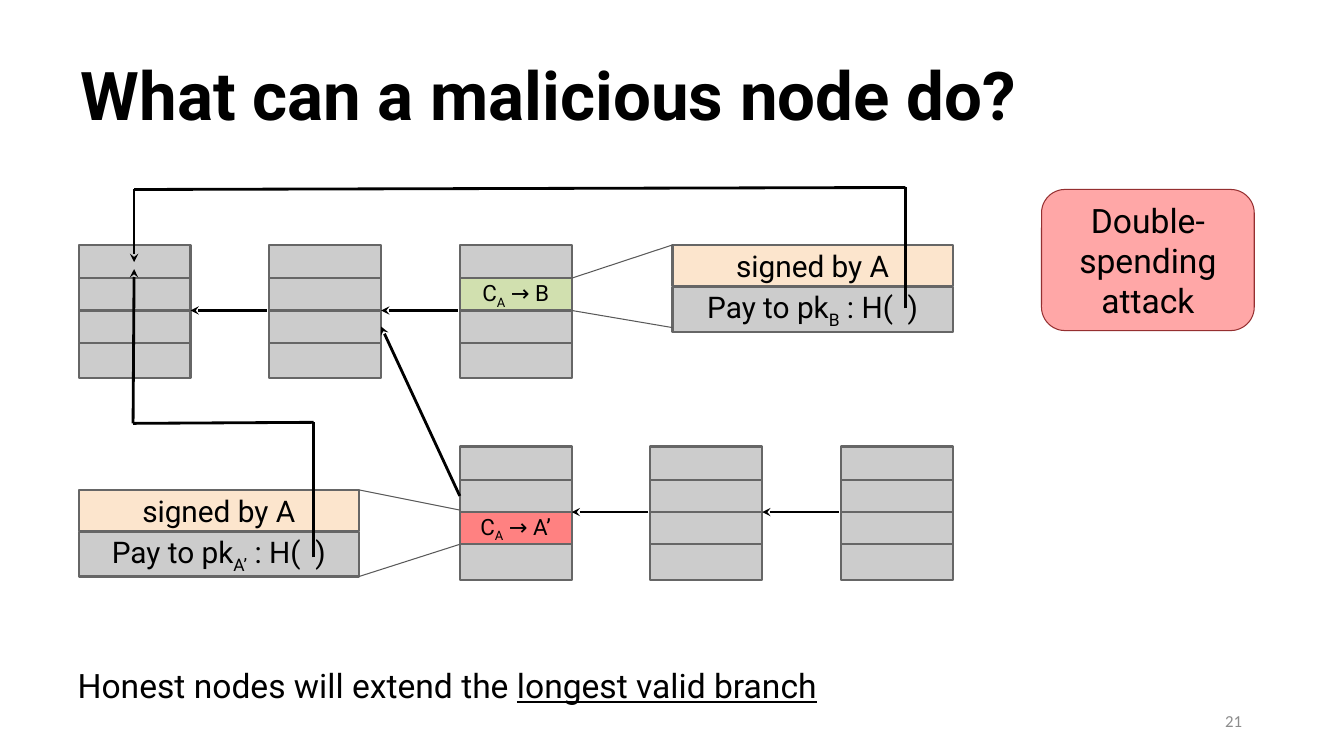
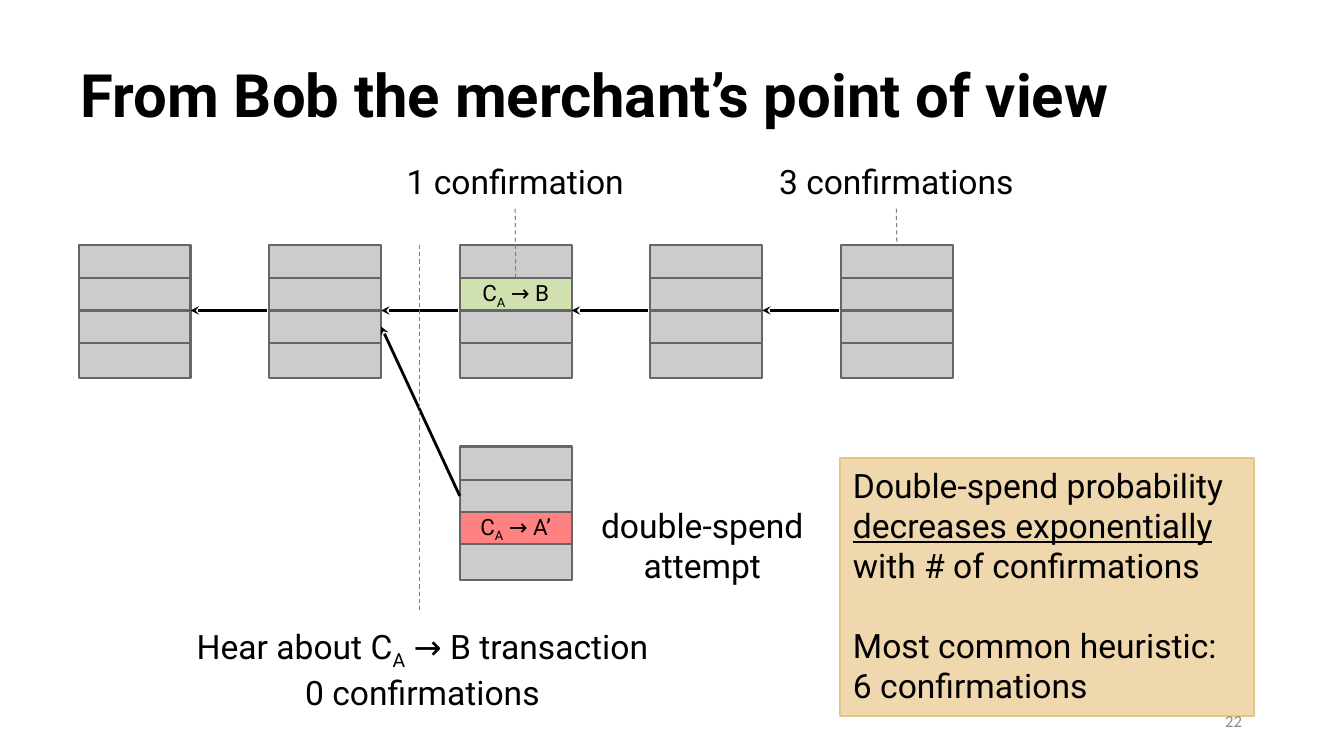
from lxml.etree import SubElement
from pptx import Presentation
from pptx.dml.color import RGBColor as RGB
from pptx.enum.dml import MSO_LINE as DASH
from pptx.enum.shapes import MSO_CONNECTOR as LINK
from pptx.enum.shapes import MSO_SHAPE as SHAPE
from pptx.enum.text import MSO_ANCHOR as ANCHOR
from pptx.enum.text import MSO_AUTO_SIZE as FIT
from pptx.enum.text import PP_ALIGN as ALIGN
from pptx.oxml.ns import qn
from pptx.util import Pt

SCALE = 9144
BLACK = RGB(0x00, 0x00, 0x00)
GREY = RGB(0xCC, 0xCC, 0xCC)
EDGE = RGB(0x66, 0x66, 0x66)
ZOOM = RGB(0x59, 0x59, 0x59)
GUIDE = RGB(0x7F, 0x7F, 0x7F)
PALE = RGB(0x8C, 0x8C, 0x8C)
GREEN = RGB(0xD1, 0xE0, 0xAF)
RED = RGB(0xFF, 0x81, 0x81)
CREAM = RGB(0xFC, 0xE5, 0xCD)
PINK = RGB(0xFF, 0xA7, 0xA7)
WINE = RGB(0x95, 0x2F, 0x30)
SAND = RGB(0xEF, 0xD7, 0xAE)
GOLD = RGB(0xE7, 0xC5, 0x86)

LEFT, PITCH, WIDE = 78, 189, 111
HIGH, LOW = 243, 443
ROWS = [(0, 33), (33, 32), (65, 32), (97, 35)]
JOINT = 65
CARD = 278


def px(*nums):
    return [num * SCALE for num in nums]


def col_x(col):
    return LEFT + col * PITCH


def lower(font):
    font._element.set("baseline", "-25000")


def under(font):
    font.underline = True


def write(shape, text, size=24, align=ALIGN.CENTER, anchor=ANCHOR.TOP,
          mark=lower, face="Roboto", color=BLACK, bold=False, gap=0):
    frame = shape.text_frame
    frame.word_wrap = True
    frame.auto_size = FIT.NONE
    frame.vertical_anchor = anchor
    frame.margin_left, frame.margin_right = px(13, 13)
    frame.margin_top, frame.margin_bottom = px(7, 7)
    frame.text = text
    for num, para in enumerate(frame.paragraphs):
        para.alignment = align
        if num and gap:
            para.space_before = Pt(gap)
        parts = para.text.split("|")
        para.text = parts[0]
        for part in parts[1:]:
            para.add_run().text = part
        for run in para.runs:
            font = run.font
            font.name, font.size, font.bold = face, Pt(size), bold
            font.color.rgb = color
        for run in para.runs[1::2] if len(parts) > 1 else []:
            mark(run.font)


def label(slide, box, text, **style):
    write(slide.shapes.add_textbox(*px(*box)), text, **style)


def panel(shapes, box, fill, edge=EDGE, width=1.5, kind=SHAPE.RECTANGLE):
    shape = shapes.add_shape(kind, *px(*box))
    shape.shadow.inherit = False
    shape.fill.solid()
    shape.fill.fore_color.rgb = fill
    shape.line.color.rgb = edge
    shape.line.width = Pt(width)
    return shape


def stroke(slide, start, end, color=BLACK, width=2, tip=False, dash=False):
    line = slide.shapes.add_connector(LINK.STRAIGHT, *px(*start, *end))
    line.line.color.rgb = color
    line.line.width = Pt(width)
    if dash:
        line.line.dash_style = DASH.DASH
    props = line._element.spPr
    if tip:
        SubElement(props.find(qn("a:ln")), qn("a:tailEnd"), type="stealth")
    SubElement(props, qn("a:effectLst"))
    return line


def guide(slide, start, end):
    return stroke(slide, start, end, GUIDE, 0.75, dash=True)


def block(slide, col, top, spot=None, text="", fill=GREY):
    group = slide.shapes.add_group_shape()
    cells = []
    for row, (drop, tall) in enumerate(ROWS):
        tint = fill if row == spot else GREY
        cell = panel(group.shapes, (col_x(col), top + drop, WIDE, tall), tint)
        if row == spot:
            write(cell, text, 16, anchor=ANCHOR.MIDDLE)
        cells.append(cell)
    return cells


def arrow(slide, col, top):
    y = top + JOINT
    stroke(slide, (col_x(col) - 2, y), (col_x(col - 1) + WIDE, y), tip=True)


def card(slide, x, top, text):
    group = slide.shapes.add_group_shape()
    for drop, tall, fill, words in ((42, 44, GREY, text),
                                    (0, 41, CREAM, "signed by A")):
        cell = panel(group.shapes, (x, top + drop, CARD, tall), fill)
        write(cell, words, 21.3, anchor=ANCHOR.MIDDLE)


def route(slide, *points):
    last = len(points) - 2
    for num, (start, end) in enumerate(zip(points, points[1:])):
        stroke(slide, start, end, tip=num == last)


def chain(slide, top):
    cells = []
    for col in (3, 4):
        cells = block(slide, col, top)
        arrow(slide, col, top)
    return cells


def fork(slide):
    block(slide, 0, HIGH)
    base = block(slide, 1, HIGH)
    good = block(slide, 2, HIGH, 1, "C|A| → B", GREEN)
    bad = block(slide, 2, LOW, 2, "C|A| → A’", RED)
    for col in (1, 2):
        arrow(slide, col, HIGH)
    branch = stroke(slide, (456, 492), (378, 324), tip=True)
    branch.begin_connect(bad[1], 1)
    branch.end_connect(base[2], 3)
    return good


def start(deck, layout, text, size):
    slide = deck.slides.add_slide(layout)
    write(slide.shapes.title, text, size, ALIGN.LEFT, ANCHOR.MIDDLE, bold=True)
    return slide


def number(slide, text):
    label(slide, (942, 695, 303, 40), text, size=12, align=ALIGN.RIGHT,
          anchor=ANCHOR.MIDDLE, face="Calibri", color=PALE)


def attack(deck, layout):
    slide = start(deck, layout, "What can a malicious node do?", 48)
    fork(slide)
    chain(slide, LOW)
    card(slide, 667, HIGH, "Pay to pk|B| : H(  )")
    card(slide, LEFT, 486, "Pay to pk|A’| : H(  )")
    route(slide, (898, 306), (898, 186), (133, 188), (133, 260))
    route(slide, (311, 553), (311, 419), (132, 420), (133, 267))
    for ends in (((567, 276), (667, 243)), ((567, 308), (667, 325)),
                 ((356, 486), (456, 506)), ((356, 572), (456, 540))):
        stroke(slide, *ends, ZOOM, 0.75)
    badge = panel(slide.shapes, (1033, 188, 211, 140), PINK, WINE, 0.75,
                  SHAPE.ROUNDED_RECTANGLE)
    write(badge, "Double-spending attack", anchor=ANCHOR.MIDDLE)
    label(slide, (64, 653, 781, 54),
          "Honest nodes will extend the |longest valid branch",
          align=ALIGN.LEFT, mark=under)
    number(slide, "21")


def merchant(deck, layout):
    slide = start(deck, layout, "From Bob the merchant’s point of view", 42.7)
    good = fork(slide)
    end = chain(slide, HIGH)
    guide(slide, (416, HIGH), (416, 608))
    guide(slide, (511, 207), (511, 276)).end_connect(good[1], 0)
    guide(slide, (889, 207), (889, HIGH)).end_connect(end[0], 0)
    label(slide, (174, 614, 490, 94),
          "Hear about C|A| → B transaction\n0 confirmations")
    label(slide, (387, 153, 248, 54), "1 confirmation")
    label(slide, (758, 153, 262, 54), "3 confirmations")
    label(slide, (581, 494, 231, 94), "double-spend\vattempt")
    note = panel(slide.shapes, (833, 454, 411, 256), SAND, GOLD)
    write(note, "Double-spend probability |decreases exponentially"
          "| with # of confirmations\n"
          "Most common heuristic:\v6 confirmations",
          align=ALIGN.LEFT, mark=under, gap=28)
    number(slide, "22")


def main():
    deck = Presentation()
    deck.slide_width, deck.slide_height = px(1333, 750)
    layout = deck.slide_layouts[5]
    head = layout.placeholders[0]
    head.left, head.top, head.width, head.height = px(67, 30, 1200, 125)
    attack(deck, layout)
    merchant(deck, layout)
    deck.save("out.pptx")


if __name__ == "__main__":
    main()
